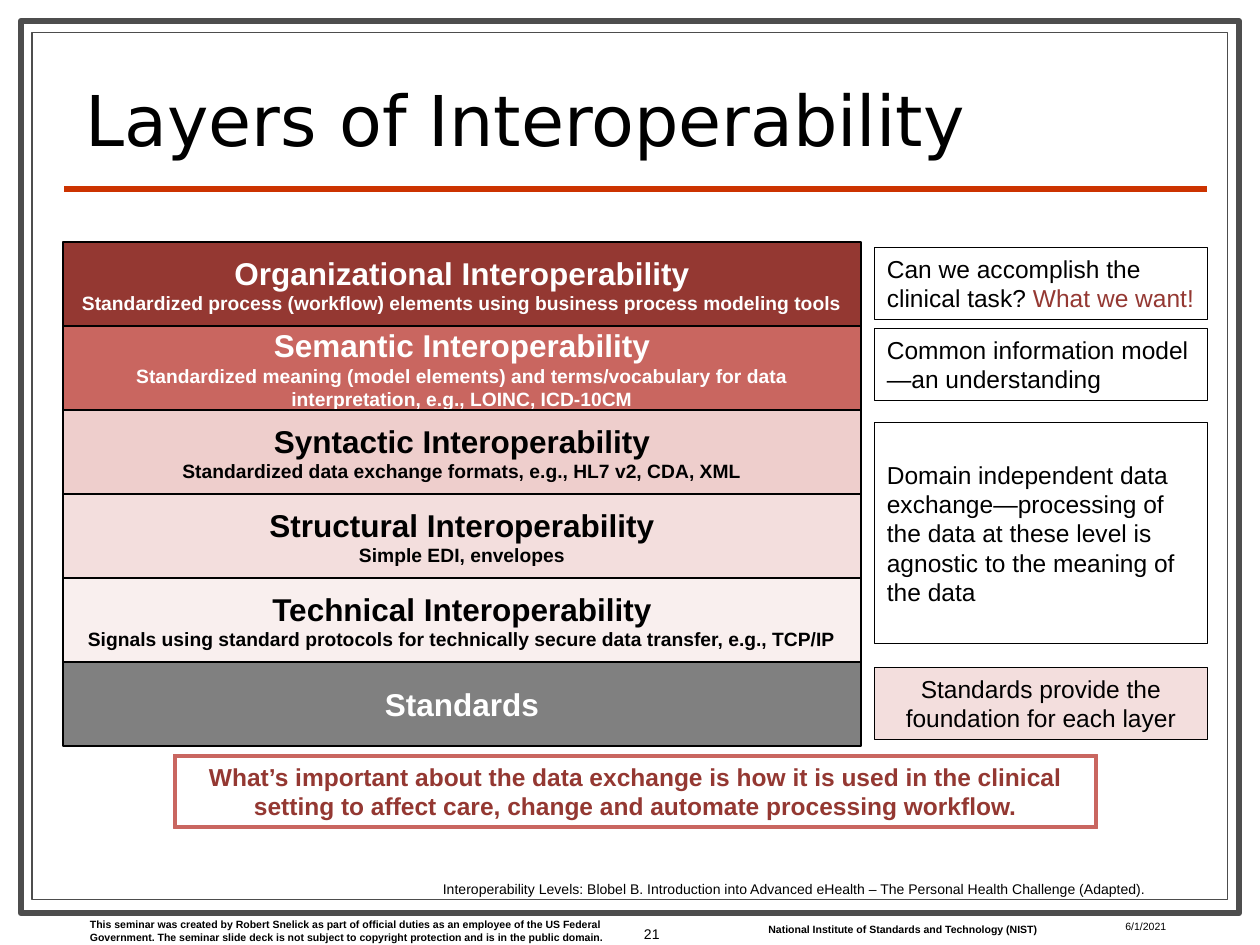
from dataclasses import dataclass
from typing import Optional

import pptx
import pptx.dml.color
import pptx.enum.shapes
import pptx.enum.text
import pptx.oxml
import pptx.oxml.ns
import pptx.util

Pt = pptx.util.Pt
Shape = pptx.enum.shapes.MSO_SHAPE
Align = pptx.enum.text.PP_ALIGN
Anchor = pptx.enum.text.MSO_ANCHOR


@dataclass(frozen=True)
class Theme:
    font: str = "Arial"
    title_font: str = "DejaVu Sans"
    black: str = "000000"
    white: str = "FFFFFF"
    border: str = "4D4D4D"
    rule: str = "CC3300"
    dark_red: str = "943832"
    red: str = "C96660"
    pink: str = "EECECC"
    light_pink: str = "F3DEDD"
    pale_pink: str = "F9EFEE"
    gray: str = "808080"
    title: float = 40
    heading: float = 18
    body: float = 14
    detail: float = 11
    small: float = 8
    footer: float = 6
    thin: float = 0.75


@dataclass(frozen=True)
class Box:
    x: float
    y: float
    w: float
    h: float


@dataclass(frozen=True)
class Layer:
    name: str
    detail: str
    fill: str
    color: str


@dataclass(frozen=True)
class Note:
    y: float
    h: float
    text: str
    accent: str = ""
    fill: Optional[str] = None
    align: Align = Align.LEFT


@dataclass(frozen=True)
class Label:
    box: Box
    text: str
    size: float
    bold: bool = False
    align: Align = Align.LEFT
    anchor: Anchor = Anchor.TOP


T = Theme()

LAYERS = [
    Layer("Organizational Interoperability",
          "Standardized process (workflow) elements using business process modeling tools",
          T.dark_red, T.white),
    Layer("Semantic Interoperability",
          "Standardized meaning (model elements) and terms/vocabulary for data "
          "interpretation, e.g., LOINC, ICD-10CM", T.red, T.white),
    Layer("Syntactic Interoperability",
          "Standardized data exchange formats, e.g., HL7 v2, CDA, XML", T.pink, T.black),
    Layer("Structural Interoperability", "Simple EDI, envelopes", T.light_pink, T.black),
    Layer("Technical Interoperability",
          "Signals using standard protocols for technically secure data transfer, e.g., TCP/IP",
          T.pale_pink, T.black),
    Layer("Standards", "", T.gray, T.white),
]
LAYER_X, LAYER_Y, LAYER_W, LAYER_H = 36, 138.3, 456, 48

NOTES = [
    Note(141.3, 41.2, "Can we accomplish the clinical task? ", "What we want!"),
    Note(187.6, 41.2, "Common information model—an understanding"),
    Note(241.6, 126.2, "Domain independent data exchange—processing of the data at these "
         "level is agnostic to the meaning of the data"),
    Note(381.3, 41.2, "Standards provide the foundation for each layer",
         fill=T.light_pink, align=Align.CENTER),
]
NOTE_X, NOTE_W = 499.7, 190.3

LABELS = [
    Label(Box(44.3, 521.3, 312, 21.6),
          "This seminar was created by Robert Snelick as part of official duties as an "
          "employee of the US Federal Government. The seminar slide deck is not subject to "
          "copyright protection and is in the public domain.", T.footer, bold=True),
    Label(Box(432, 524, 171.4, 14.4),
          "National Institute of Standards and Technology (NIST)", T.footer, bold=True),
    Label(Box(342, 515, 42, 37), "21", T.small, align=Align.RIGHT, anchor=Anchor.MIDDLE),
    Label(Box(636, 522, 66, 12), "6/1/2021", T.footer),
    Label(Box(246, 499.7, 420, 17),
          "Interoperability Levels: Blobel B. Introduction into Advanced eHealth – "
          "The Personal Health Challenge (Adapted).", T.small),
]


def rgb(color: str) -> pptx.dml.color.RGBColor:
    return pptx.dml.color.RGBColor.from_string(color)


def add_text(p, text: str, *, size: float, color: str = T.black,
             bold: bool = False, font: str = T.font, align: Align = Align.LEFT):
    p.alignment = align
    r = p.add_run()
    r.text = text
    r.font.name, r.font.size, r.font.bold = font, Pt(size), bold
    r.font.color.rgb = rgb(color)


def add_shape(s, box: Box, fill: Optional[str], line: str = T.black,
              width: float = T.thin, kind: Shape = Shape.RECTANGLE):
    sp = s.shapes.add_shape(kind, Pt(box.x), Pt(box.y), Pt(box.w), Pt(box.h))
    sp.shadow.inherit = False
    if fill:
        sp.fill.solid()
        sp.fill.fore_color.rgb = rgb(fill)
    else:
        sp.fill.background()
    sp.line.color.rgb = rgb(line)
    sp.line.width = Pt(width)
    sp.text_frame.word_wrap = True
    sp.text_frame.vertical_anchor = Anchor.MIDDLE
    return sp


def add_textbox(s, box: Box, anchor: Anchor):
    tf = s.shapes.add_textbox(Pt(box.x), Pt(box.y), Pt(box.w), Pt(box.h)).text_frame
    tf.word_wrap = True
    tf.vertical_anchor = anchor
    return tf


def add_rule(s, x1: float, x2: float, y: float):
    c = s.shapes.add_connector(pptx.enum.shapes.MSO_CONNECTOR.STRAIGHT,
                               Pt(x1), Pt(y), Pt(x2), Pt(y))
    c.line.color.rgb = rgb(T.rule)
    c.line.width = Pt(3)
    effects = pptx.oxml.parse_xml(f"<a:effectLst {pptx.oxml.ns.nsdecls('a')}/>")
    c._element.spPr.append(effects)


def add_layer(s, index: int, layer: Layer):
    box = Box(LAYER_X, LAYER_Y + index * LAYER_H, LAYER_W, LAYER_H)
    tf = add_shape(s, box, layer.fill).text_frame
    fmt = dict(color=layer.color, bold=True, align=Align.CENTER)
    add_text(tf.paragraphs[0], layer.name, size=T.heading, **fmt)
    if layer.detail:
        add_text(tf.add_paragraph(), layer.detail, size=T.detail, **fmt)


def add_note(s, note: Note):
    sp = add_shape(s, Box(NOTE_X, note.y, NOTE_W, note.h), note.fill)
    p = sp.text_frame.paragraphs[0]
    add_text(p, note.text, size=T.body, align=note.align)
    if note.accent:
        add_text(p, note.accent, size=T.body, color=T.dark_red, align=note.align)


def add_label(s, label: Label):
    tf = add_textbox(s, label.box, label.anchor)
    add_text(tf.paragraphs[0], label.text, size=label.size, bold=label.bold,
             align=label.align)


def main():
    prs = pptx.Presentation()
    prs.slide_width, prs.slide_height = Pt(720), Pt(540)
    s = prs.slides.add_slide(prs.slide_layouts[6])

    add_shape(s, Box(12, 12, 696, 510), T.white, T.border, 3.5)
    add_shape(s, Box(18.3, 18.7, 683.3, 495.3), T.white, T.border)
    add_rule(s, 36.7, 690, 108)

    p = add_textbox(s, Box(42, 30, 642, 65), Anchor.BOTTOM).paragraphs[0]
    p.line_spacing = 0.8
    add_text(p, "Layers of Interoperability", size=T.title, font=T.title_font)

    for index, layer in enumerate(LAYERS):
        add_layer(s, index, layer)
    for note in NOTES:
        add_note(s, note)
    for label in LABELS:
        add_label(s, label)

    sp = add_shape(s, Box(99.3, 431.3, 528, 42), T.red, T.red, kind=Shape.FRAME)
    sp.adjustments[0] = 0.04
    add_text(sp.text_frame.paragraphs[0],
             "What’s important about the data exchange is how it is used in the clinical "
             "setting to affect care, change and automate processing workflow.",
             size=T.body, color=T.dark_red, bold=True, align=Align.CENTER)

    prs.save("out.pptx")


if __name__ == "__main__":
    main()
